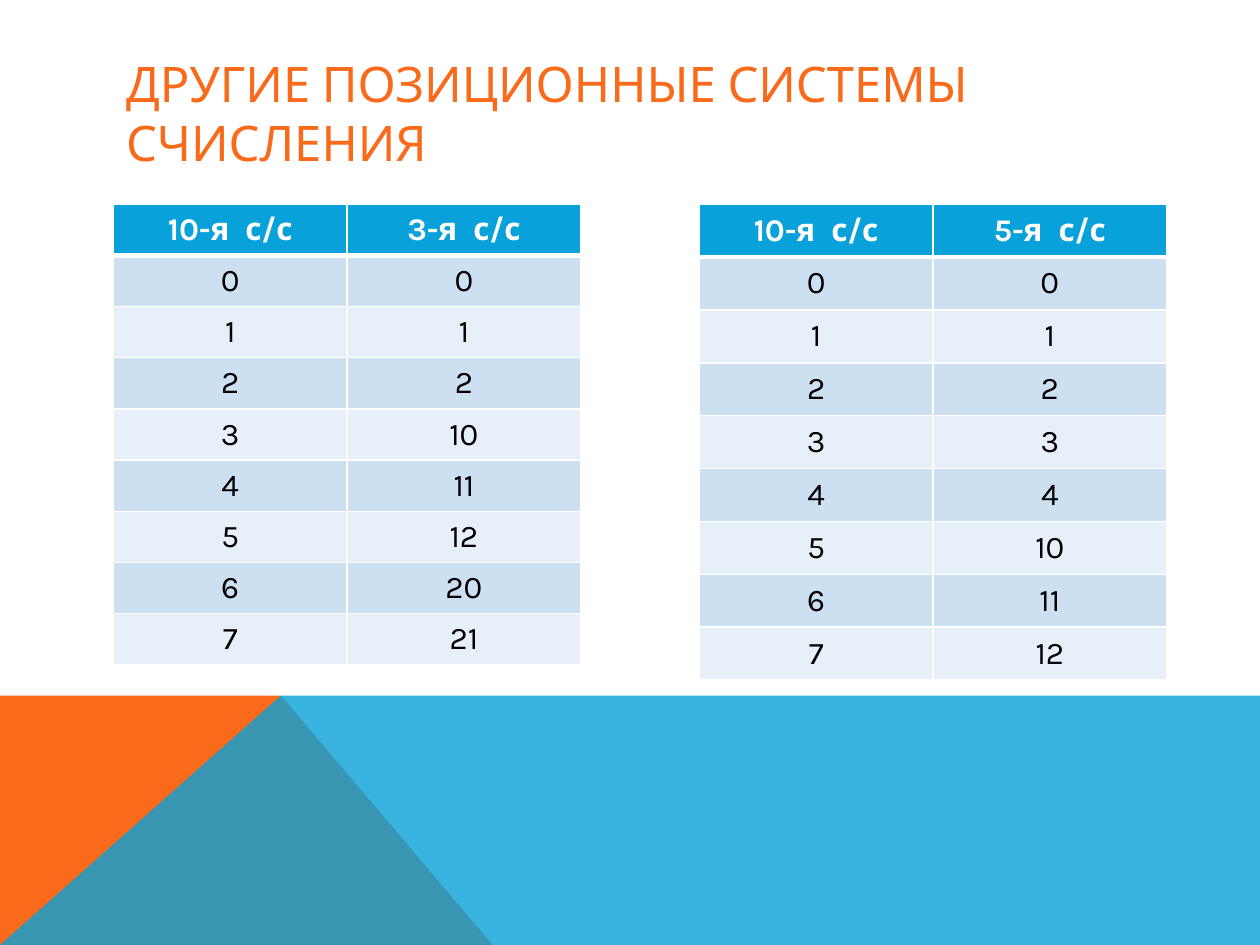
from lxml import etree
from pptx import Presentation
from pptx.dml.color import RGBColor
from pptx.enum.text import MSO_ANCHOR, PP_ALIGN
from pptx.oxml.ns import qn
from pptx.util import Inches, Pt

ORANGE = RGBColor(0xF9, 0x6A, 0x1B)
BLUE = RGBColor(0x08, 0xA1, 0xD9)
DARK_BAND = RGBColor(0xCC, 0xE0, 0xF1)
LIGHT_BAND = RGBColor(0xE7, 0xF0, 0xF8)
WHITE = RGBColor(0xFF, 0xFF, 0xFF)
BLACK = RGBColor(0, 0, 0)
FONT = "Karla"


def write_text(frame, text, size, color, bold=False, align=PP_ALIGN.LEFT):
    frame.word_wrap = True
    paragraph = frame.paragraphs[0]
    paragraph.alignment = align
    run = paragraph.add_run()
    run.text = text
    run.font.name = FONT
    run.font.size = Pt(size)
    run.font.bold = bold
    run.font.color.rgb = color


def add_region(slide, points, color, opacity=100):
    corners = [(Inches(x), Inches(y)) for x, y in points]
    builder = slide.shapes.build_freeform(*corners[0])
    builder.add_line_segments(corners[1:], close=True)
    region = builder.convert_to_shape()
    region.shadow.inherit = False
    region.line.fill.background()
    region.fill.solid()
    region.fill.fore_color.rgb = color
    if opacity < 100:
        tint = region._element.spPr.find(qn("a:solidFill"))[0]
        etree.SubElement(tint, qn("a:alpha"), val=str(opacity * 1000))


def add_footer(slide, left, top, width, height):
    right, bottom = left + width, top + height
    peak = (left + 2.23, top)
    add_region(slide, [(left, bottom), (left, top), peak, (left + 3.91, bottom)], ORANGE)
    add_region(slide, [(left, bottom), peak, (right, top), (right, bottom)], BLUE, opacity=80)


def add_title(slide, left, top, width, height):
    title = slide.shapes.title
    title.left, title.top = Inches(left), Inches(top)
    title.width, title.height = Inches(width), Inches(height)
    title.text_frame.vertical_anchor = MSO_ANCHOR.MIDDLE
    write_text(title.text_frame, "ДРУГИЕ ПОЗИЦИОННЫЕ СИСТЕМЫ СЧИСЛЕНИЯ", size=28, color=ORANGE)


def set_borders(cell, **widths):
    properties = cell._tc.get_or_add_tcPr()
    for side in "LRTB":
        border = etree.SubElement(properties, qn(f"a:ln{side}"), w=str(Pt(widths.get(side, 1))))
        fill = etree.SubElement(border, qn("a:solidFill"))
        etree.SubElement(fill, qn("a:srgbClr"), val=str(WHITE))


def in_base(number, base):
    quotient, digit = divmod(number, base)
    return (in_base(quotient, base) if quotient else "") + str(digit)


def add_number_table(slide, base, left, top, width, height):
    rows = [("10-я  с/с", f"{base}-я  с/с")]
    rows += [(str(number), in_base(number, base)) for number in range(8)]
    table = slide.shapes.add_table(
        len(rows), 2, Inches(left), Inches(top), Inches(width), Inches(height)
    ).table
    for row_index, row in enumerate(rows):
        is_header = row_index == 0
        band = BLUE if is_header else DARK_BAND if row_index % 2 else LIGHT_BAND
        for column_index, text in enumerate(row):
            cell = table.cell(row_index, column_index)
            set_borders(cell, T=3 if row_index == 1 else 1, B=3 if is_header else 1)
            cell.fill.solid()
            cell.fill.fore_color.rgb = band
            cell.vertical_anchor = MSO_ANCHOR.MIDDLE
            write_text(cell.text_frame, text, size=18, bold=is_header,
                       color=WHITE if is_header else BLACK, align=PP_ALIGN.CENTER)


def main():
    presentation = Presentation()
    presentation.slide_width, presentation.slide_height = Inches(10), Inches(7.5)
    slide = presentation.slides.add_slide(presentation.slide_layouts[5])
    add_footer(slide, 0, 5.52, 10, 1.98)
    add_title(slide, 0.9, 0.4, 8.22, 0.99)
    add_number_table(slide, 3, 0.9, 1.62, 3.71, 3.66)
    add_number_table(slide, 5, 5.55, 1.62, 3.71, 3.78)
    presentation.save("out.pptx")


if __name__ == "__main__":
    main()
